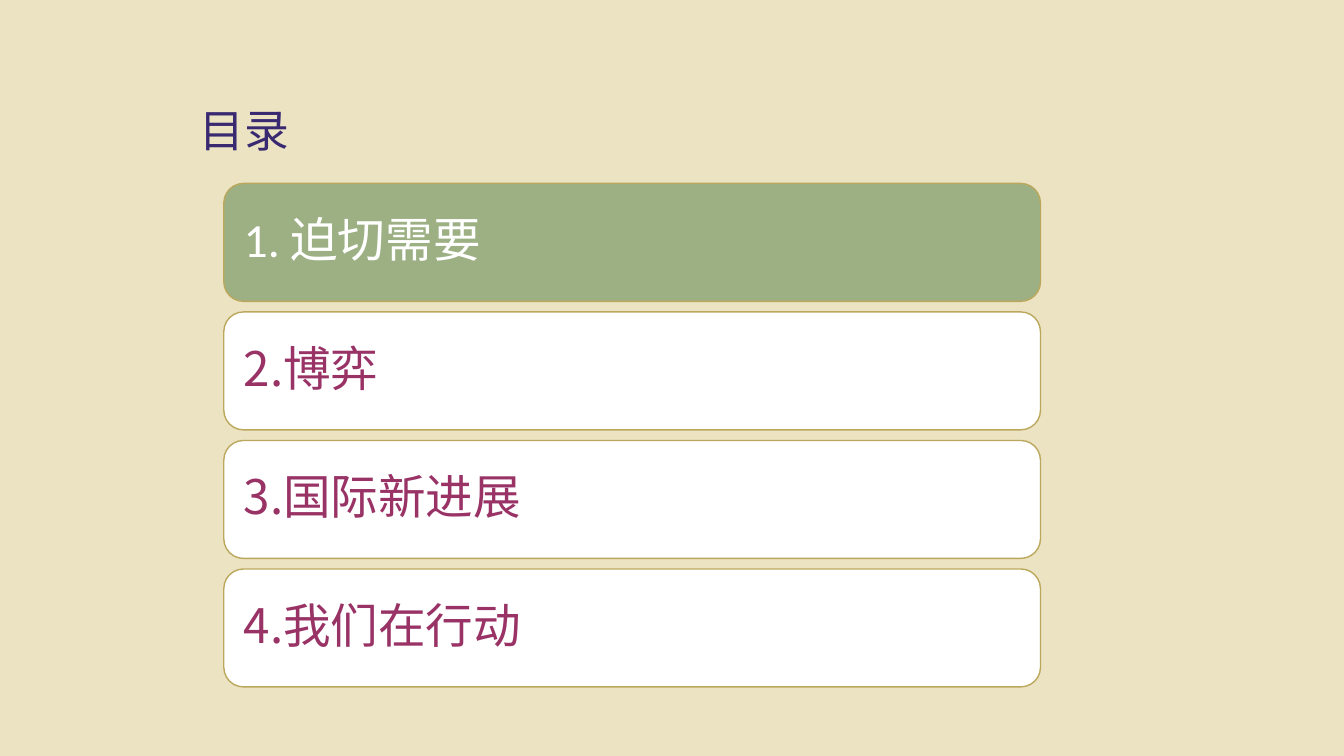
from dataclasses import dataclass

from lxml.etree import SubElement
from pptx import Presentation
from pptx.dml.color import RGBColor
from pptx.enum.shapes import MSO_SHAPE
from pptx.enum.text import MSO_ANCHOR, PP_ALIGN
from pptx.oxml.ns import qn
from pptx.util import Inches, Pt


@dataclass(frozen=True)
class Theme:
    """Colours, fonts and type sizes of the slide."""
    background: str = "EBE3C2"
    title: str = "382971"
    active: str = "9CB084"
    plain: str = "FFFFFF"
    border: str = "BBA85D"
    item: str = "993366"
    latin: str = "Calibri"
    cjk: str = "Noto Sans CJK SC"
    title_size: int = 32
    item_size: int = 34


THEME = Theme()
LEFT, TOP, WIDTH, HEIGHT, PITCH = 2.22, 1.82, 8.1, 1.17, 1.275
AGENDA = [
    [("1.", THEME.latin), (" 迫切需要", THEME.cjk)],
    [("2.博弈", THEME.cjk)],
    [("3.国际新进展", THEME.cjk)],
    [("4.我们在行动", THEME.cjk)],
]


def rgb(value):
    """Turn a hex string into a colour."""
    return RGBColor.from_string(value)


def style_run(r, size, color, font):
    """Set the size, colour and both script fonts of a run."""
    r.font.size = Pt(size)
    r.font.color.rgb = rgb(color)
    r.font.name = font
    SubElement(r.font._element, qn("a:ea"), typeface=THEME.cjk)


def add_title(slide, text):
    """Place and format the title placeholder."""
    sp = slide.shapes.title
    sp.left, sp.top, sp.width, sp.height = map(Inches, (1.88, 0.97, 1.1, 0.64))
    tf = sp.text_frame
    tf.text = text
    tf.word_wrap = False
    tf.vertical_anchor = MSO_ANCHOR.TOP
    p = tf.paragraphs[0]
    p.alignment = PP_ALIGN.LEFT
    style_run(p.runs[0], THEME.title_size, THEME.title, THEME.cjk)


def add_item(slide, row, parts, active):
    """Add one agenda bar on the given row."""
    sp = slide.shapes.add_shape(
        MSO_SHAPE.ROUNDED_RECTANGLE, Inches(LEFT), Inches(TOP + row * PITCH),
        Inches(WIDTH), Inches(HEIGHT))
    sp.shadow.inherit = False
    sp.fill.solid()
    sp.fill.fore_color.rgb = rgb(THEME.active if active else THEME.plain)
    sp.line.color.rgb = rgb(THEME.border)
    sp.line.width = Pt(1)
    tf = sp.text_frame
    tf.word_wrap = True
    tf.vertical_anchor = MSO_ANCHOR.MIDDLE
    tf.margin_left = tf.margin_right = Inches(0.14)
    p = tf.paragraphs[0]
    p.alignment = PP_ALIGN.LEFT
    p.line_spacing = 0.9
    for text, font in parts:
        r = p.add_run()
        r.text = text
        style_run(r, THEME.item_size, THEME.plain if active else THEME.item, font)


def main():
    """Build the agenda slide."""
    prs = Presentation()
    prs.slide_width, prs.slide_height = Inches(13.33), Inches(7.5)
    slide = prs.slides.add_slide(prs.slide_layouts[5])
    slide.background.fill.solid()
    slide.background.fill.fore_color.rgb = rgb(THEME.background)
    add_title(slide, "目录")
    for row, parts in enumerate(AGENDA):
        add_item(slide, row, parts, active=row == 0)
    prs.save("out.pptx")


if __name__ == "__main__":
    main()
